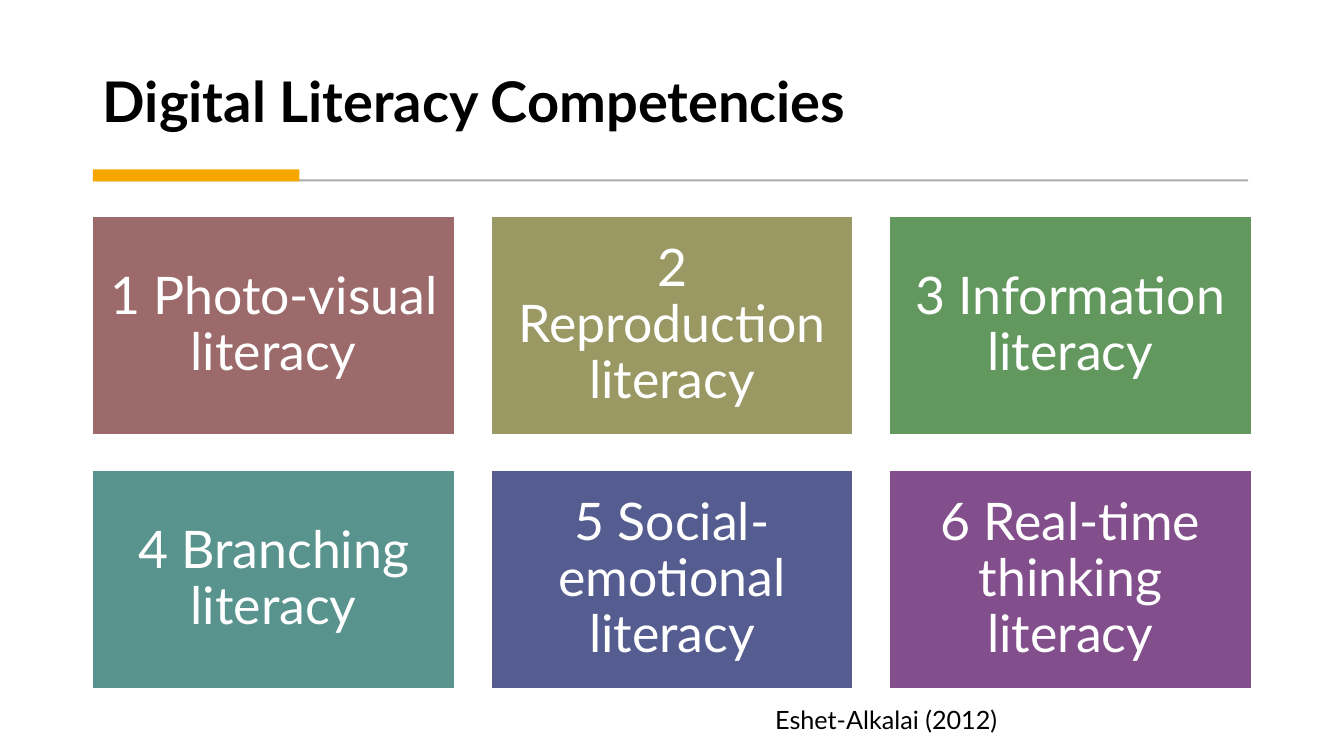
"""Build the slide on the six digital literacy competencies."""
import pptx
import pptx.dml.color
import pptx.enum.shapes
import pptx.enum.text
import pptx.oxml.ns
import pptx.util
from lxml import etree

Inches = pptx.util.Inches
Pt = pptx.util.Pt
ALIGN = pptx.enum.text.PP_ALIGN
ANCHOR = pptx.enum.text.MSO_ANCHOR
FIT = pptx.enum.text.MSO_AUTO_SIZE

LEFT, TOP = 0.92, 2.15
TILE_WIDTH, TILE_HEIGHT = 3.59, 2.16
COLUMN_STEP, ROW_STEP = 3.95, 2.52
COLUMNS = 3

COMPETENCIES = [
    ("1 Photo-visual literacy", "9C6A6A"),
    ("2 Reproduction literacy", "9A9863"),
    ("3 Information literacy", "62975E"),
    ("4 Branching literacy", "59938E"),
    ("5 Social-emotional literacy", "545C90"),
    ("6 Real-time thinking literacy", "824F8C"),
]


def rgb(code):
    return pptx.dml.color.RGBColor.from_string(code)


class CompetencySlide:
    font = "Lato"
    white = "FFFFFF"
    black = "000000"

    def __init__(self, deck):
        self.slide = deck.slides.add_slide(deck.slide_layouts[5])
        self.shapes = self.slide.shapes
        self.slide.background.fill.solid()
        self.slide.background.fill.fore_color.rgb = rgb(self.white)

    def add_words(self, frame, text, size, color, align=ALIGN.LEFT, bold=False, spacing=1.0):
        frame.word_wrap = True
        paragraph = frame.paragraphs[0]
        paragraph.alignment = align
        paragraph.line_spacing = spacing
        run = paragraph.add_run()
        run.text = text
        run.font.name = self.font
        run.font.size = Pt(size)
        run.font.bold = bold
        run.font.color.rgb = rgb(color)

    def title(self, text, left, top, width, height):
        heading = self.shapes.title
        heading.left, heading.top = Inches(left), Inches(top)
        heading.width, heading.height = Inches(width), Inches(height)
        frame = heading.text_frame
        frame.auto_size = FIT.NONE
        frame.vertical_anchor = ANCHOR.BOTTOM
        self.add_words(frame, text, 40, self.black, bold=True, spacing=0.9)

    def rule(self, left, top, width, color, opacity):
        line = self.shapes.add_connector(
            pptx.enum.shapes.MSO_CONNECTOR.STRAIGHT,
            Inches(left), Inches(top), Inches(left + width), Inches(top))
        line.line.width = Pt(1.5)
        line.line.color.rgb = rgb(color)
        qn = pptx.oxml.ns.qn
        properties = line.element.spPr
        shade = next(properties.iter(qn("a:srgbClr")))
        etree.SubElement(shade, qn("a:alpha")).set("val", str(opacity * 1000))
        etree.SubElement(properties, qn("a:effectLst"))

    def block(self, left, top, width, height, color):
        box = self.shapes.add_shape(
            pptx.enum.shapes.MSO_SHAPE.RECTANGLE,
            Inches(left), Inches(top), Inches(width), Inches(height))
        box.shadow.inherit = False
        box.fill.solid()
        box.fill.fore_color.rgb = rgb(color)
        box.line.fill.background()
        return box

    def tile(self, text, left, top, color):
        box = self.block(left, top, TILE_WIDTH, TILE_HEIGHT, color)
        box.line.color.rgb = rgb(self.white)
        box.line.width = Pt(1)
        frame = box.text_frame
        frame.margin_left = frame.margin_right = Inches(0.15)
        frame.margin_top = frame.margin_bottom = Inches(0.15)
        frame.vertical_anchor = ANCHOR.MIDDLE
        self.add_words(frame, text, 37, self.white, ALIGN.CENTER, spacing=0.9)

    def citation(self, text, left, top, width, height):
        source = self.shapes.add_textbox(
            Inches(left), Inches(top), Inches(width), Inches(height))
        source.text_frame.auto_size = FIT.SHAPE_TO_FIT_TEXT
        self.add_words(source.text_frame, text, 18, self.black)


def main():
    deck = pptx.Presentation()
    deck.slide_width, deck.slide_height = Inches(13.33), Inches(7.5)
    page = CompetencySlide(deck)
    page.title("Digital Literacy Competencies", LEFT, 0.28, 11.49, 1.11)
    page.rule(0.95, 1.79, 11.43, "595959", 50)
    page.block(LEFT, 1.68, 2.05, 0.12, "F5A700")
    for index, (competency, color) in enumerate(COMPETENCIES):
        row, column = divmod(index, COLUMNS)
        page.tile(competency, LEFT + column * COLUMN_STEP, TOP + row * ROW_STEP, color)
    page.citation("Eshet-Alkalai (2012)", 7.59, 6.94, 5.54, 0.4)
    deck.save("out.pptx")


if __name__ == "__main__":
    main()
